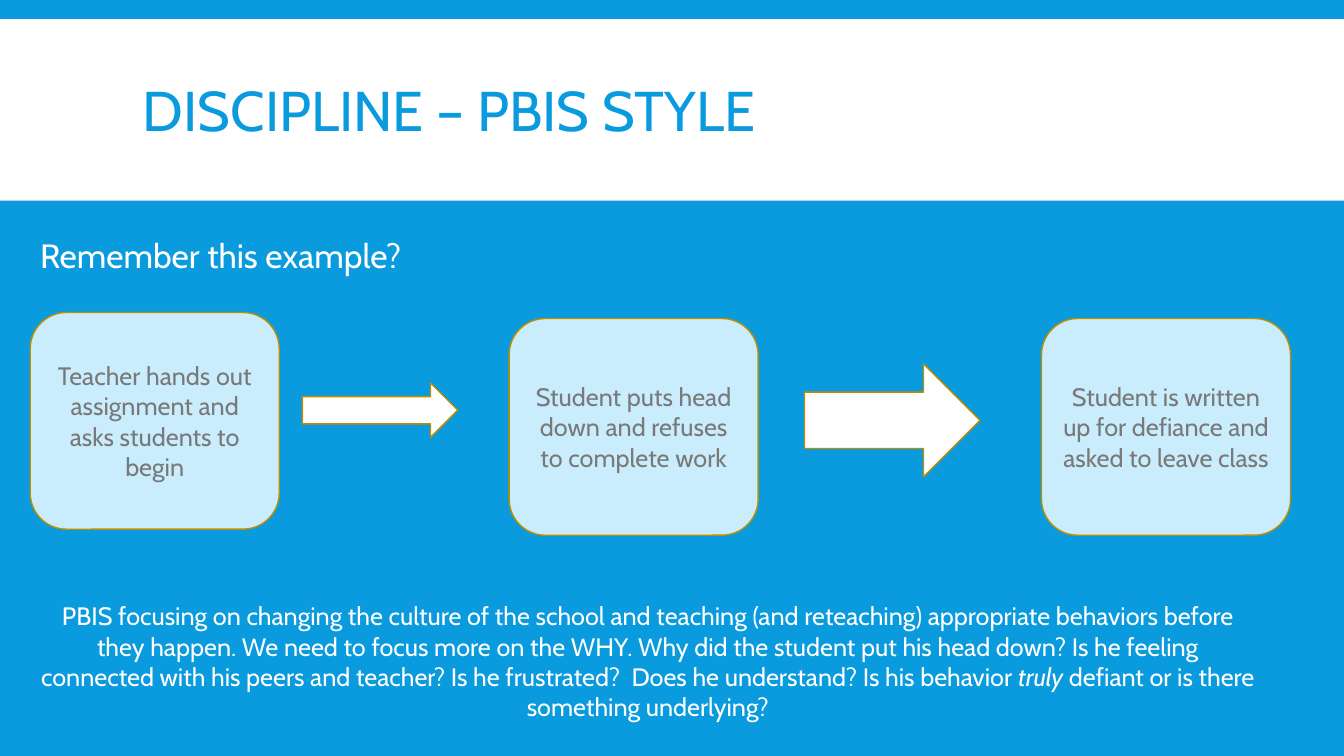
"""Build the slide on discipline the PBIS way."""
from pptx import Presentation
from pptx.dml.color import RGBColor
from pptx.enum.shapes import MSO_SHAPE as SHAPE
from pptx.enum.text import MSO_ANCHOR as ANCHOR, PP_ALIGN as ALIGN
from pptx.util import Pt

PX = 9144
SLIDE_W, SLIDE_H = 1333, 750
FONT = "Cabin"
COLORS = {"blue": "099BDD", "white": "FFFFFF", "pale": "C9EDFD",
          "gold": "BD8E00", "gray": "797979"}

BAND = (0, 19, SLIDE_W, 180)
STEP_SIZE = (247, 215)
STEPS = [
    ((30, 310), "Teacher hands out assignment and asks students to begin"),
    ((505, 316), "Student puts head down and refuses to complete work"),
    ((1033, 316), "Student is written up for defiance and asked to leave class"),
]
ARROWS = [(300, 380, 154, 54), (798, 361, 174, 112)]

TITLE = [("DISCIPLINE – PBIS STYLE", {})]
QUESTION = [("Remember this example?", {})]
MESSAGE = [
    ("PBIS focusing on changing the culture of the school and teaching (and "
     "reteaching) appropriate behaviors before they happen. We need to focus "
     "more on the WHY. Why did the student put his head down? Is he feeling "
     "connected with his peers and teacher? Is he frustrated?  Does he "
     "understand? Is his behavior ", {}),
    ("truly", {"italic": True}),
    (" defiant or is there something underlying?", {}),
]
TEXTS = [
    ((132, 31, 1070, 165), TITLE, 40, "blue",
     {"vertical_anchor": ANCHOR.MIDDLE}, {"line_spacing": 0.85}),
    ((30, 228, 380, 50), QUESTION, 24, "white", {"word_wrap": False}, {}),
    ((30, 591, 1225, 131), MESSAGE, 18, "white", {}, {"alignment": ALIGN.CENTER}),
]


def rgb(name):
    return RGBColor.from_string(COLORS[name])


def emu(box):
    return [v * PX for v in box]


def set_all(obj, values):
    for name, value in values.items():
        setattr(obj, name, value)


def write(sp, runs, size, color, frame, para):
    tf = sp.text_frame
    set_all(tf, {"word_wrap": True, **frame})
    p = tf.paragraphs[0]
    set_all(p, para)
    for text, style in runs:
        r = p.add_run()
        r.text = text
        set_all(r.font, {"name": FONT, "size": Pt(size), **style})
        r.font.color.rgb = rgb(color)


def add_shape(s, kind, box, fill, line=None):
    sp = s.shapes.add_shape(kind, *emu(box))
    sp.shadow.inherit = False
    sp.fill.solid()
    sp.fill.fore_color.rgb = rgb(fill)
    if line:
        sp.line.color.rgb = rgb(line)
        sp.line.width = Pt(1)
    else:
        sp.line.fill.background()
    return sp


def main():
    prs = Presentation()
    set_all(prs, {"slide_width": SLIDE_W * PX, "slide_height": SLIDE_H * PX})
    s = prs.slides.add_slide(prs.slide_layouts[6])
    s.background.fill.solid()
    s.background.fill.fore_color.rgb = rgb("blue")

    add_shape(s, SHAPE.RECTANGLE, BAND, "white")
    for box in ARROWS:
        add_shape(s, SHAPE.RIGHT_ARROW, box, "white", "gold")
    for corner, text in STEPS:
        sp = add_shape(s, SHAPE.ROUNDED_RECTANGLE, corner + STEP_SIZE, "pale", "gold")
        write(sp, [(text, {})], 18, "gray",
              {"vertical_anchor": ANCHOR.MIDDLE}, {"alignment": ALIGN.CENTER})
    for box, *content in TEXTS:
        write(s.shapes.add_textbox(*emu(box)), *content)

    prs.save("out.pptx")


if __name__ == "__main__":
    main()
